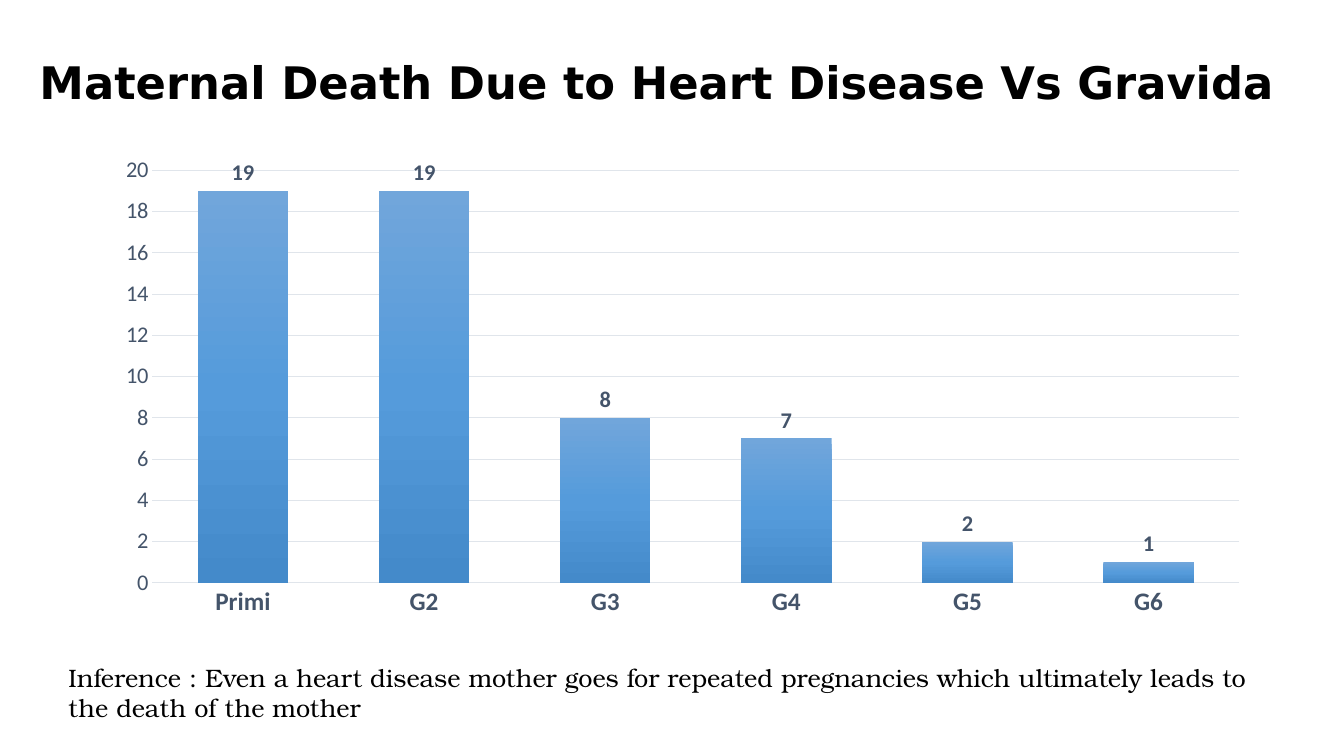
from dataclasses import dataclass

from lxml import etree
from pptx import Presentation
from pptx import util as u
from pptx.chart.data import CategoryChartData
from pptx.dml.color import RGBColor
from pptx.enum import chart as charts, text
from pptx.oxml.ns import qn


@dataclass(frozen=True)
class Theme:
    ink: str = "000000"
    label: str = "44546A"
    grid: str = "E0E5EB"
    bar_gradient: tuple = ((0, "71A6DB"), (50, "559BDB"), (100, "448ACA"))
    title_font: str = "DejaVu Sans"
    body_font: str = "TeX Gyre Bonum"
    chart_font: str = "Calibri"
    title_size: int = 32
    body_size: int = 18
    category_size: int = 18
    value_size: int = 16


class SlideBuilder:
    def __init__(self, slide, theme):
        self.slide = slide
        self.theme = theme

    def set_font(self, font, name, size, color, bold=False):
        font.name = name
        font.size = u.Pt(size)
        font.bold = bold
        font.color.rgb = RGBColor.from_string(color)

    def set_grid_line(self, line):
        line.color.rgb = RGBColor.from_string(self.theme.grid)
        line.width = u.Pt(0.75)

    def add_text(self, box, words, font_name, size, bold=False,
                 align=text.PP_ALIGN.LEFT, anchor=text.MSO_ANCHOR.TOP, spacing=None):
        shape = self.slide.shapes.add_textbox(*map(u.Inches, box))
        frame = shape.text_frame
        frame.word_wrap = True
        frame.vertical_anchor = anchor
        paragraph = frame.paragraphs[0]
        paragraph.text = words
        paragraph.alignment = align
        paragraph.line_spacing = spacing
        self.set_font(paragraph.font, font_name, size, self.theme.ink, bold)

    def fill_gradient(self, series):
        """Give the bars a vertical gradient with the theme's stops."""
        fill = series.format.fill
        fill.gradient()
        fill.gradient_angle = 270
        stop_list = series.format._element.spPr.find(".//" + qn("a:gsLst"))
        for stop in list(stop_list):
            stop_list.remove(stop)
        for percent, color in self.theme.bar_gradient:
            stop = etree.SubElement(stop_list, qn("a:gs"), pos=str(percent * 1000))
            etree.SubElement(stop, qn("a:srgbClr"), val=color)

    def add_column_chart(self, box, series_name, values):
        theme = self.theme
        data = CategoryChartData(number_format="General")
        data.categories = list(values)
        data.add_series(series_name, list(values.values()))
        chart = self.slide.shapes.add_chart(
            charts.XL_CHART_TYPE.COLUMN_CLUSTERED, *map(u.Inches, box), data).chart
        chart.has_title = False
        chart.has_legend = False
        self.set_font(chart.font, theme.chart_font, 10, theme.ink)

        # Axes
        category_axis, value_axis = chart.category_axis, chart.value_axis
        for axis, size, bold in ((category_axis, theme.category_size, True),
                                 (value_axis, theme.value_size, False)):
            axis.major_tick_mark = charts.XL_TICK_MARK.NONE
            axis.minor_tick_mark = charts.XL_TICK_MARK.NONE
            self.set_font(axis.tick_labels.font, theme.chart_font, size, theme.label, bold)
        self.set_grid_line(category_axis.format.line)
        value_axis.format.line.fill.background()
        value_axis.has_major_gridlines = True
        self.set_grid_line(value_axis.major_gridlines.format.line)
        value_axis.minimum_scale, value_axis.maximum_scale = 0, 20
        value_axis.major_unit = 2

        # Bars and their labels
        plot = chart.plots[0]
        plot.gap_width = 100
        plot.overlap = -24
        plot.vary_by_categories = False
        series = plot.series[0]
        self.fill_gradient(series)
        labels = series.data_labels
        labels.show_value = True
        labels.position = charts.XL_LABEL_POSITION.OUTSIDE_END
        self.set_font(labels.font, theme.chart_font, theme.value_size, theme.label, True)


def main():
    presentation = Presentation()
    presentation.slide_width = u.Inches(13.33)
    presentation.slide_height = u.Inches(7.5)
    theme = Theme()
    builder = SlideBuilder(
        presentation.slides.add_slide(presentation.slide_layouts[6]), theme)

    # Title
    builder.add_text((0, 0.23, 13.04, 1.23),
                     "Maternal Death Due to Heart Disease Vs Gravida",
                     theme.title_font, theme.title_size, bold=True,
                     align=text.PP_ALIGN.CENTER, anchor=text.MSO_ANCHOR.MIDDLE, spacing=0.9)

    # Deaths by gravida
    deaths = {"Primi": 19, "G2": 19, "G3": 8, "G4": 7, "G5": 2, "G6": 1}
    builder.add_column_chart((1.02, 1.46, 11.5, 4.76), "Series 1", deaths)

    # Inference
    builder.add_text((0.58, 6.52, 12.12, 0.71),
                     "Inference : Even a heart disease mother goes for repeated pregnancies "
                     "which ultimately leads to the death of the mother",
                     theme.body_font, theme.body_size)

    presentation.save("out.pptx")


if __name__ == "__main__":
    main()
